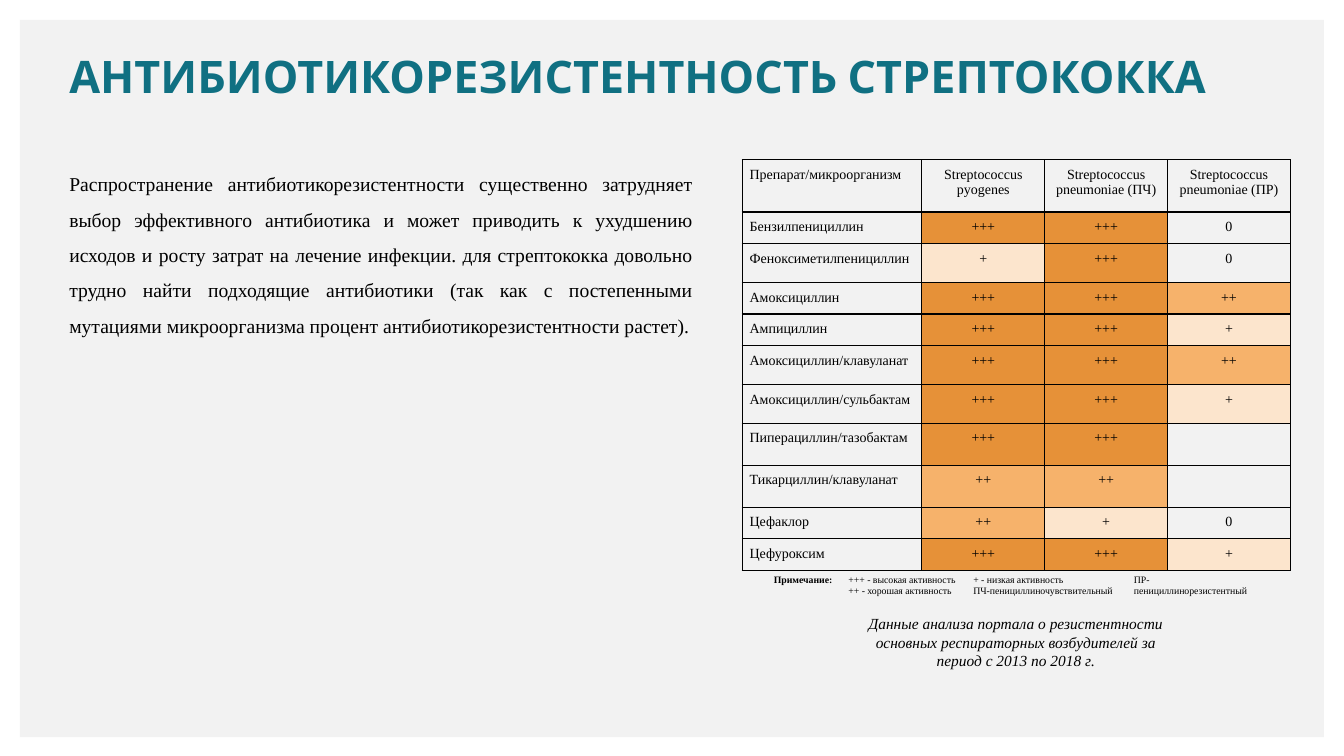
from pptx import Presentation
from pptx.dml.color import RGBColor
from pptx.enum.shapes import MSO_SHAPE as Shape
from pptx.enum.text import MSO_ANCHOR as Anchor, PP_ALIGN as Align
from pptx.oxml import parse_xml
from pptx.oxml.ns import nsdecls
from pptx.util import Pt

PX = 9525  # EMU per px, 96 px to the inch
SERIF = "Times New Roman"
BLACK = RGBColor(0x00, 0x00, 0x00)
PANEL = RGBColor(0xF2, 0xF2, 0xF2)
TEAL = RGBColor(0x10, 0x70, 0x82)
ACTIVITY_FILLS = {
    "+++": RGBColor(0xE6, 0x91, 0x38),
    "++": RGBColor(0xF6, 0xB2, 0x6B),
    "+": RGBColor(0xFC, 0xE5, 0xCD),
}
CELL_INSET = 7

TITLE = "АНТИБИОТИКОРЕЗИСТЕНТНОСТЬ СТРЕПТОКОККА"
BODY = (
    "Распространение антибиотикорезистентности существенно затрудняет выбор "
    "эффективного антибиотика и может приводить к ухудшению исходов и росту "
    "затрат на лечение инфекции. для стрептококка довольно трудно найти "
    "подходящие антибиотики (так как с постепенными мутациями микроорганизма "
    "процент антибиотикорезистентности растет)."
)
CAPTION = (
    "Данные анализа портала о резистентности основных респираторных "
    "возбудителей за период с 2013 по 2018 г."
)
DRUG_COLUMNS = [171, 117, 117, 117]
# Row height, then the cells of the row
DRUGS = [
    (50, "Препарат/микроорганизм", "Streptococcus pyogenes",
     "Streptococcus pneumoniae (ПЧ)", "Streptococcus pneumoniae (ПР)"),
    (28, "Бензилпенициллин", "+++", "+++", "0"),
    (37, "Феноксиметилпенициллин", "+", "+++", "0"),
    (28, "Амоксициллин", "+++", "+++", "++"),
    (28, "Ампициллин", "+++", "+++", "+"),
    (37, "Амоксициллин/клавуланат", "+++", "+++", "++"),
    (37, "Амоксициллин/сульбактам", "+++", "+++", "+"),
    (40, "Пиперациллин/тазобактам", "+++", "+++", ""),
    (40, "Тикарциллин/клавуланат", "++", "++", ""),
    (28, "Цефаклор", "++", "+", "0"),
    (28, "Цефуроксим", "+++", "+++", "+"),
]
NOTE_COLUMNS = [71, 119, 153, 133]
NOTES = [(
    48, "Примечание:",
    "+++ - высокая активность\n++ - хорошая активность",
    "+ - низкая активность\nПЧ-пенициллиночувствительный",
    "ПР- пенициллинорезистентный",
)]


def emu(*lengths):
    return [length * PX for length in lengths]


def style(paragraph, size, name=SERIF, color=BLACK, align=Align.LEFT,
          bold=False, italic=False):
    font = paragraph.font
    font.size, font.name = Pt(size), name
    font.bold, font.italic = bold, italic
    font.color.rgb = color
    paragraph.alignment = align


def add_text(slide, box, text, size, inset=0, anchor=Anchor.TOP,
             spacing=1.0, **look):
    frame = slide.shapes.add_textbox(*emu(*box)).text_frame
    frame.word_wrap = True
    frame.vertical_anchor = anchor
    frame.margin_left = frame.margin_right = inset * PX
    frame.margin_top = frame.margin_bottom = inset * PX
    frame.text = text
    paragraph = frame.paragraphs[0]
    paragraph.line_spacing = spacing
    style(paragraph, size, **look)


def set_borders(cell, color):
    """Outline the cell in the colour, or hide its borders if it is None."""
    paint = (f'<a:solidFill><a:srgbClr val="{color}"/></a:solidFill>'
             if color is not None else "<a:noFill/>")
    properties = cell._tc.get_or_add_tcPr()
    for index, side in enumerate(("lnL", "lnR", "lnT", "lnB")):
        properties.insert(index, parse_xml(
            f'<a:{side} {nsdecls("a")} w="{Pt(1)}">{paint}</a:{side}>'))


def add_grid(slide, left, top, columns, rows, size, border=None):
    """Add a plain table and return its cells, row by row."""
    box = emu(left, top, sum(columns), sum(row[0] for row in rows))
    table = slide.shapes.add_table(len(rows), len(columns), *box).table
    table.first_row = table.horz_banding = False
    for column, width in zip(table.columns, columns):
        column.width = width * PX
    for row, (height, *texts) in zip(table.rows, rows):
        row.height = height * PX
        for cell, text in zip(row.cells, texts):
            cell.margin_left = cell.margin_right = CELL_INSET * PX
            cell.margin_top = cell.margin_bottom = CELL_INSET * PX
            cell.text = text
            cell.fill.background()
            set_borders(cell, border)
            for paragraph in cell.text_frame.paragraphs:
                style(paragraph, size)
    return [list(row.cells) for row in table.rows]


def add_panel(slide, left, top, width, height):
    panel = slide.shapes.add_shape(
        Shape.RECTANGLE, *emu(left, top, width, height))
    panel.shadow.inherit = False
    panel.fill.solid()
    panel.fill.fore_color.rgb = PANEL
    panel.line.fill.background()


def add_drug_table(slide, left, top):
    for cells in add_grid(slide, left, top, DRUG_COLUMNS, DRUGS, 10, BLACK):
        for cell in cells[1:]:
            cell.text_frame.paragraphs[0].alignment = Align.CENTER
            if cell.text in ACTIVITY_FILLS:
                cell.fill.solid()
                cell.fill.fore_color.rgb = ACTIVITY_FILLS[cell.text]


def add_legend(slide, left, top):
    heading = add_grid(slide, left, top, NOTE_COLUMNS, NOTES, 7)[0][0]
    heading.text_frame.paragraphs[0].font.bold = True


def add_evidence(slide, left, top):
    """Drug table with its legend and source caption below."""
    add_drug_table(slide, left, top)
    add_legend(slide, left + 23, top + 388)
    add_text(slide, (left + 103, top + 420, 315, 79), CAPTION, 11, inset=10,
             anchor=Anchor.MIDDLE, align=Align.CENTER, italic=True)


def main():
    deck = Presentation()
    deck.slide_width, deck.slide_height = emu(1280, 720)
    slide = deck.slides.add_slide(deck.slide_layouts[6])

    add_panel(slide, 19, 19, 1242, 683)
    add_text(slide, (66, 52, 1162, 38), TITLE, 32, spacing=0.9,
             name="Cabin", color=TEAL, bold=True)
    add_text(slide, (66, 153, 594, 453), BODY, 14, spacing=1.5,
             align=Align.JUSTIFY)
    add_evidence(slide, 707, 152)

    deck.save("out.pptx")


if __name__ == "__main__":
    main()
